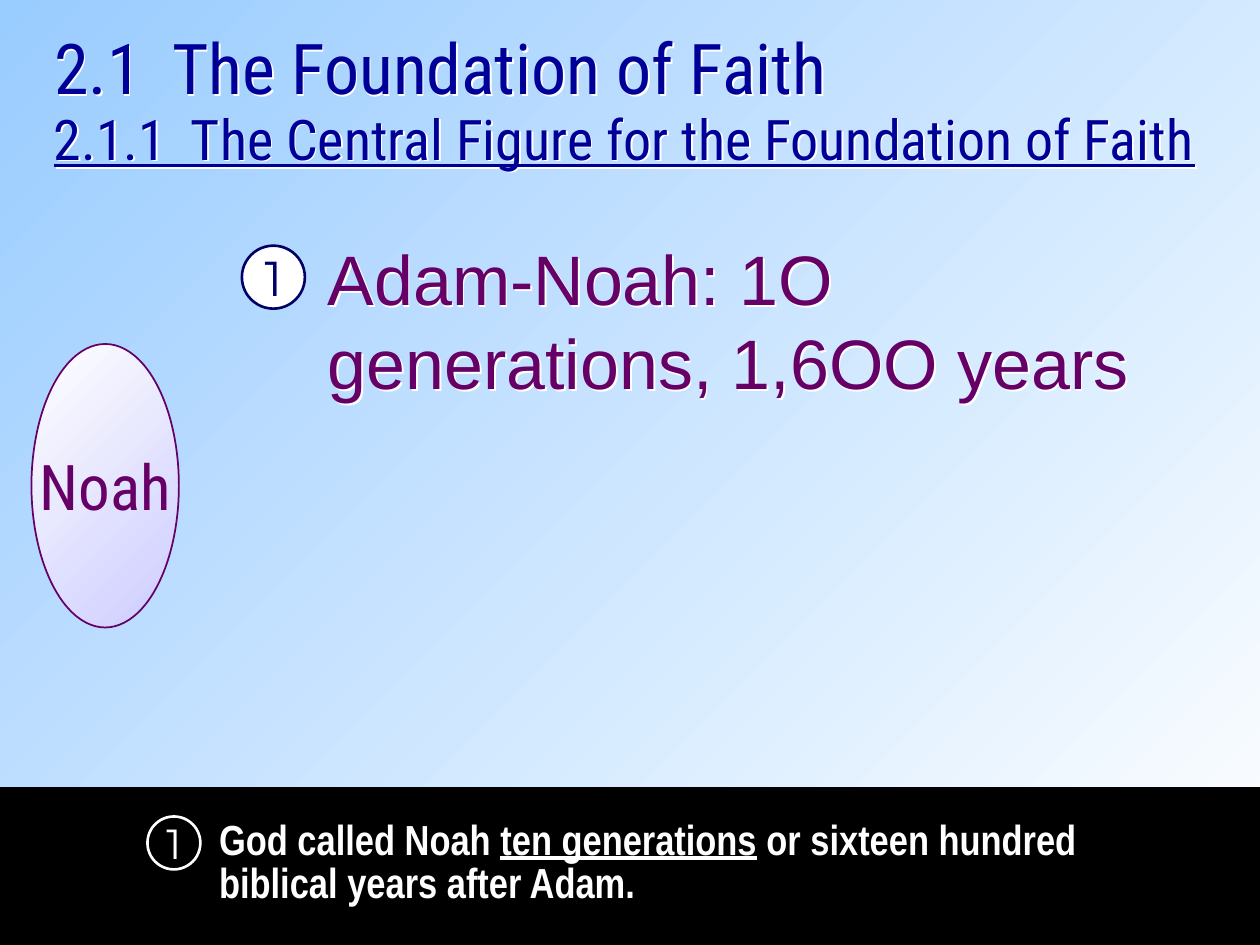
from lxml.etree import SubElement
from pptx import Presentation
from pptx.dml.color import RGBColor
from pptx.enum.shapes import MSO_SHAPE as SHAPE
from pptx.enum.text import MSO_ANCHOR as ANCHOR, PP_ALIGN as ALIGN
from pptx.oxml.ns import qn
from pptx.util import Inches, Pt

WHITE = RGBColor(0xFF, 0xFF, 0xFF)
BLACK = RGBColor(0, 0, 0)
SKY = RGBColor(0x99, 0xCC, 0xFF)
LILAC = RGBColor(0xCC, 0xCC, 0xFF)
PURPLE = RGBColor(0x66, 0, 0x66)
NAVY = RGBColor(0, 0, 0x66)
BLUE = RGBColor(0, 0, 0x99)
HEAD_FONT, NUMBER_FONT = "Roboto Condensed", "Montserrat"

TITLE = [("2.1  The Foundation of Faith", False)]
SUBTITLE = [("2.1.1  The Central Figure for the Foundation of Faith", True)]
POINT = [("Adam-Noah: 1O generations, 1,6OO years", False)]
CAPTION = [
    ("God called Noah ", False),
    ("ten generations", True),
    (" or sixteen hundred biblical years after Adam.", False),
]


def place(sp, box):
    sp.left, sp.top, sp.width, sp.height = map(Inches, box)


def gradient(fill, start, end):
    fill.gradient()
    fill.gradient_angle = 315
    for stop, color, position in zip(fill.gradient_stops, (start, end), (0, 1)):
        stop.color.rgb = color
        stop.position = position


def add_text_shadow(sp):
    sp.fill.background()
    effects = SubElement(sp._element.spPr, qn("a:effectLst"))
    shadow = SubElement(effects, qn("a:outerShdw"), dist="18000", dir="2700000", algn="ctr")
    SubElement(shadow, qn("a:srgbClr"), val=str(WHITE))


def write(sp, runs, size, font, color, align=ALIGN.LEFT, anchor=ANCHOR.TOP,
          wrap=True, spacing=1.0, bold=False):
    tf = sp.text_frame
    tf.word_wrap, tf.vertical_anchor = wrap, anchor
    p = tf.paragraphs[0]
    p.alignment, p.line_spacing = align, spacing
    p.space_before = Pt(0)
    for text, underline in runs:
        r = p.add_run()
        r.text = text
        r.font.size, r.font.name = Pt(size), font
        r.font.bold, r.font.underline = bold, underline
        r.font.color.rgb = color
    return p


def add_shape(s, kind, box, line, weight, fill=None):
    sp = s.shapes.add_shape(kind, *map(Inches, box))
    sp.shadow.inherit = False
    sp.line.color.rgb, sp.line.width = line, Pt(weight)
    if fill is None:
        sp.fill.background()
    else:
        sp.fill.solid()
        sp.fill.fore_color.rgb = fill
    return sp


def write_centred(sp, text, size, font, color):
    write(sp, [(text, False)], size, font, color, ALIGN.CENTER, ANCHOR.MIDDLE, wrap=False)


def main():
    prs = Presentation()
    prs.slide_width, prs.slide_height = Inches(10), Inches(7.5)
    s = prs.slides.add_slide(prs.slide_layouts[1])
    gradient(s.background.fill, SKY, WHITE)

    title, body = s.placeholders
    place(title, (0.33, 0.25, 9.33, 0.67))
    write(title, TITLE, 40, HEAD_FONT, BLUE, spacing=0.85)

    place(body, (2.5, 1.82, 7.33, 1.44))
    p = write(body, POINT, 40, "Arial", PURPLE)
    props = p._p.get_or_add_pPr()
    props.set("marL", "0")
    props.set("indent", "0")
    SubElement(props, qn("a:buNone"))

    subtitle = s.shapes.add_textbox(*map(Inches, (0.33, 0.86, 9.33, 0.55)))
    write(subtitle, SUBTITLE, 32, HEAD_FONT, BLUE, spacing=0.85)

    for sp in (title, body, subtitle):
        add_text_shadow(sp)

    point_number = add_shape(s, SHAPE.OVAL, (1.92, 1.95, 0.5, 0.5), NAVY, 1.5, WHITE)
    write_centred(point_number, "1", 28, NUMBER_FONT, NAVY)

    noah = add_shape(s, SHAPE.OVAL, (0.25, 2.73, 1.17, 2.25), PURPLE, 1)
    gradient(noah.fill, WHITE, LILAC)
    write_centred(noah, "Noah", 36, HEAD_FONT, PURPLE)

    add_shape(s, SHAPE.RECTANGLE, (0, 6.25, 10, 1.25), BLACK, 0.75, BLACK)
    caption = s.shapes.add_textbox(*map(Inches, (1.64, 6.47, 7.11, 0.78)))
    write(caption, CAPTION, 24, "Arial Narrow", WHITE, spacing=0.85, bold=True)
    caption_number = add_shape(s, SHAPE.OVAL, (1.17, 6.48, 0.42, 0.42), WHITE, 1.5)
    write_centred(caption_number, "1", 24, NUMBER_FONT, WHITE)

    prs.save("out.pptx")


if __name__ == "__main__":
    main()
